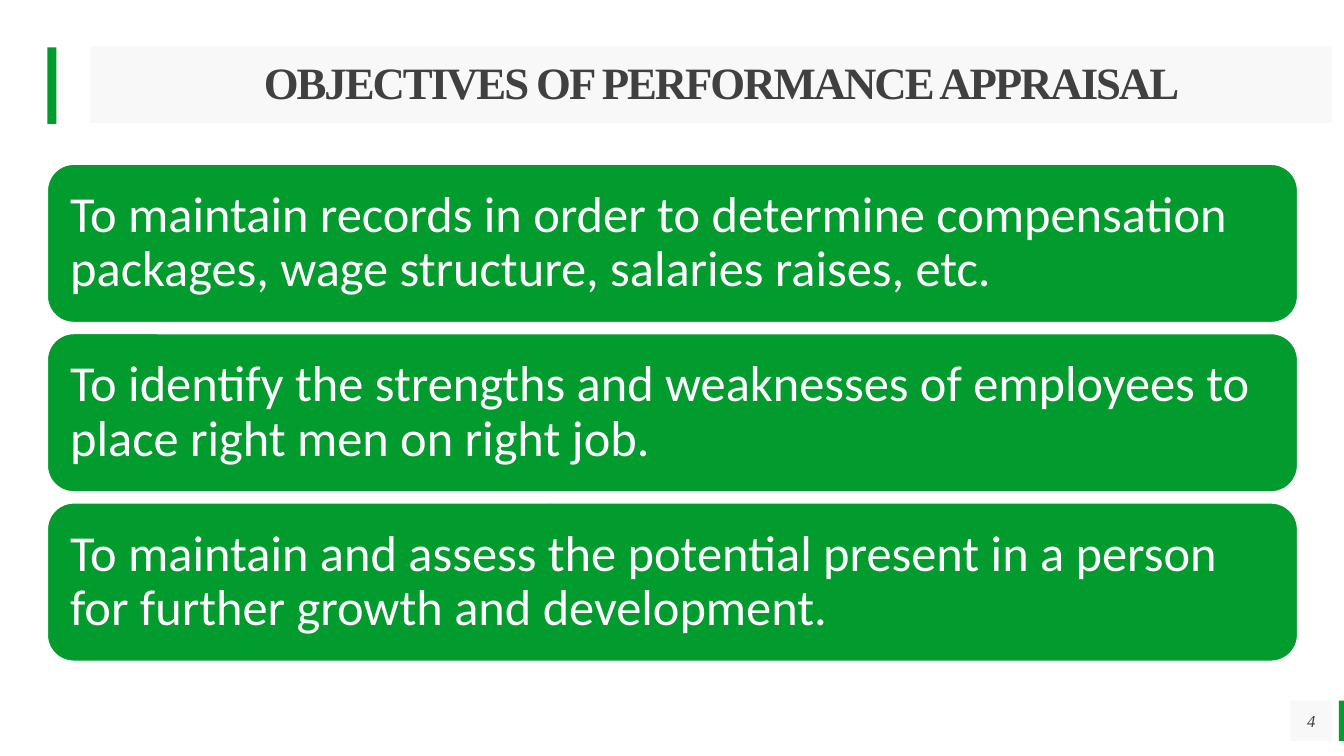
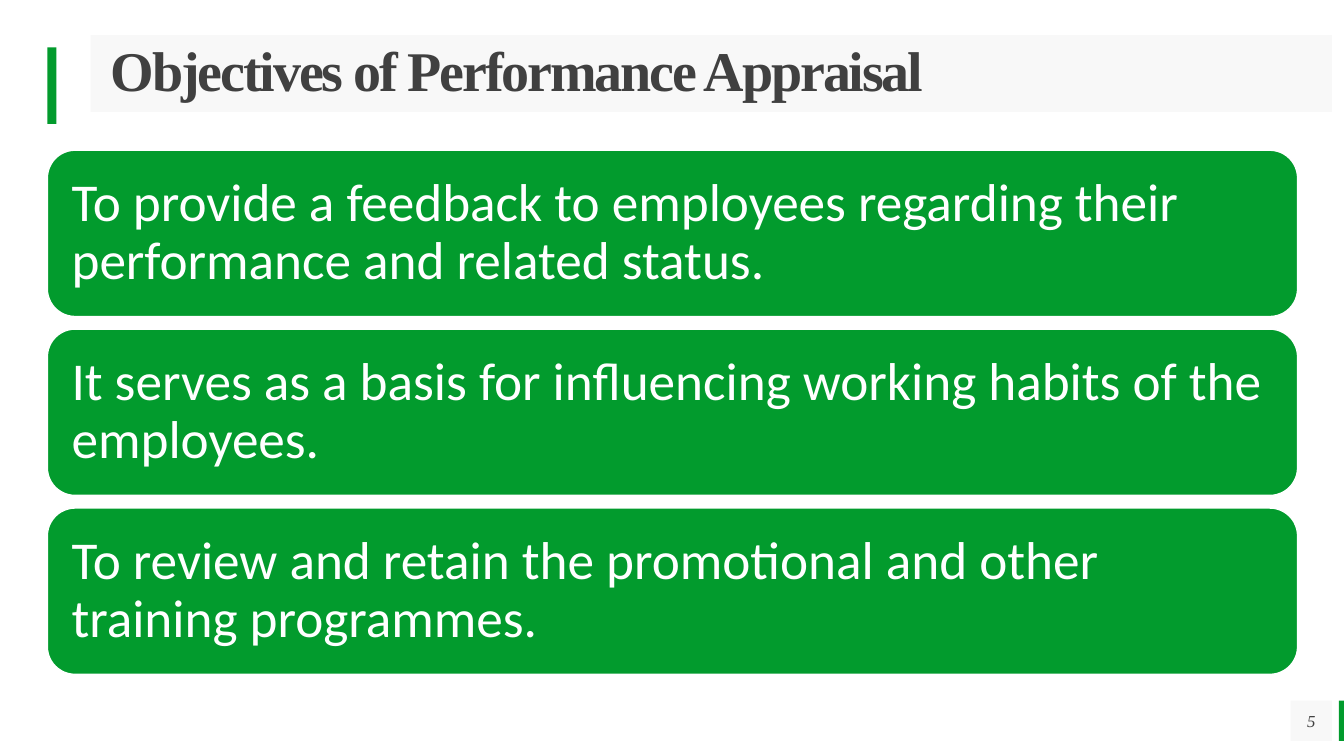
from dataclasses import dataclass

import pptx
import pptx.dml.color
import pptx.enum.shapes
import pptx.enum.text
import pptx.oxml
import pptx.oxml.ns
import pptx.util

Inches, Pt = pptx.util.Inches, pptx.util.Pt
RGBColor = pptx.dml.color.RGBColor
SHAPE = pptx.enum.shapes.MSO_SHAPE
ALIGN = pptx.enum.text.PP_ALIGN
ANCHOR = pptx.enum.text.MSO_ANCHOR

# Shared look
GREEN = RGBColor(0x02, 0x9B, 0x2D)
PALE = RGBColor(0xF2, 0xF2, 0xF2)
DARK = RGBColor(0x40, 0x40, 0x40)
WHITE = RGBColor(0xFF, 0xFF, 0xFF)
SERIF, SANS = "Times New Roman", "Calibri"

TITLE = {"name": SERIF, "bold": True, "color": DARK, "spacing": -1.5}
NUMBER = {"name": SERIF, "size": Pt(12), "italic": True, "color": DARK}
CARD = {"name": SANS, "color": WHITE}


@dataclass
class Page:
    number: int
    title: str
    title_top: float
    title_size: int
    title_align: ALIGN
    cards_top: float
    cards_bottom: float
    card_height: float
    card_size: int
    card_inset: float
    cards: list[str]


PAGES = [
    Page(4, "OBJECTIVES OF PERFORMANCE APPRAISAL", 0.46, 32, ALIGN.CENTER,
         1.63, 6.56, 1.57, 36, 0.15, [
             "To maintain records in order to determine compensation packages, "
             "wage structure, salaries raises, etc.",
             "To identify the strengths and weaknesses of employees to place "
             "right men on right job.",
             "To maintain and assess the potential present in a person for "
             "further growth and development.",
         ]),
    Page(5, "Objectives of Performance Appraisal", 0.35, 40, ALIGN.LEFT,
         1.49, 6.69, 1.65, 38, 0.16, [
             "To provide a feedback to employees regarding their performance "
             "and related status.",
             "It serves as a basis for influencing working habits of the "
             "employees.",
             "To review and retain the promotional and other training "
             "programmes.",
         ]),
]


def add_run(p, text: str, fmt: dict) -> None:
    r = p.add_run()
    r.text = text
    for key, value in fmt.items():
        if key == "color":
            r.font.color.rgb = value
        elif key == "spacing":
            r.font._element.set("spc", str(int(value * 100)))
        else:
            setattr(r.font, key, value)


def set_frame(tf, left: float, top: float, right: float,
              bottom: float) -> None:
    fmt = {"word_wrap": True, "vertical_anchor": ANCHOR.MIDDLE,
           "margin_left": Inches(left), "margin_top": Inches(top),
           "margin_right": Inches(right), "margin_bottom": Inches(bottom)}
    for key, value in fmt.items():
        setattr(tf, key, value)


def add_box(s, left: float, top: float, width: float, height: float,
            fill: RGBColor, kind: SHAPE = SHAPE.RECTANGLE, alpha: int = 100):
    sp = s.shapes.add_shape(kind, Inches(left), Inches(top),
                            Inches(width), Inches(height))
    sp.shadow.inherit = False
    sp.fill.solid()
    sp.fill.fore_color.rgb = fill
    sp.line.fill.background()
    if alpha < 100:
        color = sp.fill._xPr.find(".//" + pptx.oxml.ns.qn("a:srgbClr"))
        color.append(pptx.oxml.parse_xml(
            f'<a:alpha {pptx.oxml.ns.nsdecls("a")} val="{alpha * 1000}"/>'))
    return sp


def add_footer(s, number: int) -> None:
    # Page number and edge mark
    add_box(s, 13.28, 6.95, 0.05, 0.4, GREEN)
    sp = add_box(s, 12.8, 6.95, 0.41, 0.4, PALE, alpha=50)
    set_frame(sp.text_frame, 0, 0, 0, 0)
    p = sp.text_frame.paragraphs[0]
    p.alignment = ALIGN.CENTER
    add_run(p, str(number), NUMBER)


def add_title(s, page: Page) -> None:
    # Green accent and title band
    add_box(s, 0.47, 0.47, 0.09, 0.76, GREEN)
    sp = add_box(s, 0.9, page.title_top, 12.31, 0.76, PALE, alpha=50)
    set_frame(sp.text_frame, 0.2, 0, 0, 0)
    p = sp.text_frame.paragraphs[0]
    p.alignment = page.title_align
    p.line_spacing = 0.9
    add_run(p, page.title, TITLE | {"size": Pt(page.title_size)})


def add_cards(s, page: Page) -> None:
    # Evenly spaced cards
    room = page.cards_bottom - page.cards_top - page.card_height
    step = room / (len(page.cards) - 1)
    for i, text in enumerate(page.cards):
        sp = add_box(s, 0.47, page.cards_top + i * step, 12.4,
                     page.card_height, GREEN, SHAPE.ROUNDED_RECTANGLE)
        sp.line.color.rgb = WHITE
        sp.line.width = Pt(1)
        set_frame(sp.text_frame, *[page.card_inset] * 4)
        p = sp.text_frame.paragraphs[0]
        p.alignment = ALIGN.LEFT
        p.line_spacing = 0.9
        add_run(p, text, CARD | {"size": Pt(page.card_size)})


def main() -> None:
    prs = pptx.Presentation()
    prs.slide_width, prs.slide_height = Inches(13.33), Inches(7.5)
    for page in PAGES:
        s = prs.slides.add_slide(prs.slide_layouts[6])
        add_title(s, page)
        add_cards(s, page)
        add_footer(s, page.number)
    prs.save("out.pptx")


if __name__ == "__main__":
    main()
